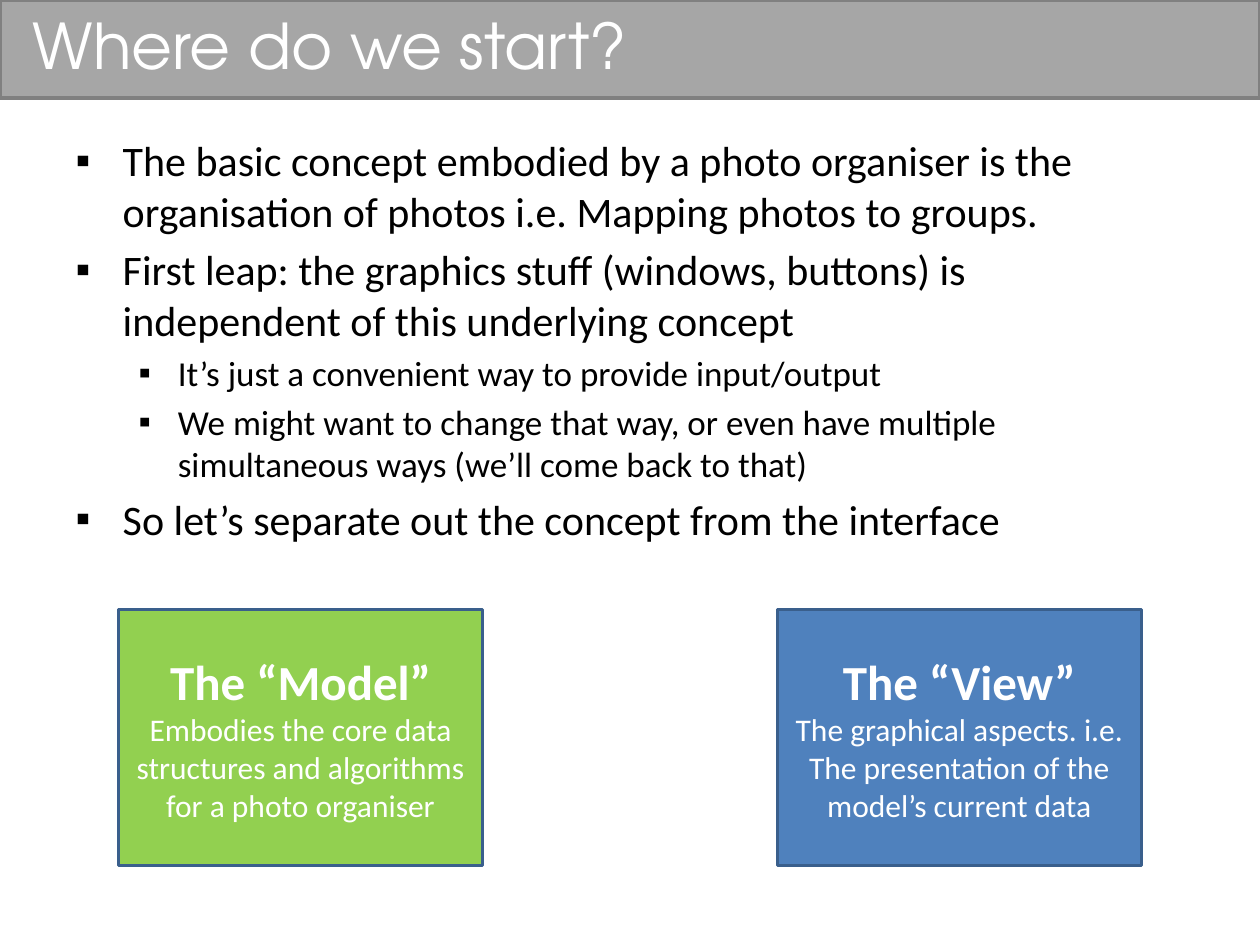
from lxml import etree
from pptx import Presentation, util as u
from pptx.dml.color import RGBColor
from pptx.enum import shapes, text
from pptx.oxml.ns import qn

# Content
TITLE = "Where do we start?"
BULLETS = [
    (0, "The basic concept embodied by a photo organiser is the organisation of photos i.e. Mapping photos to groups."),
    (0, "First leap: the graphics stuff (windows, buttons) is independent of this underlying concept"),
    (1, "It’s just a convenient way to provide input/output"),
    (1, "We might want to change that way, or even have multiple simultaneous ways (we’ll come back to that)"),
    (0, "So let’s separate out the concept from the interface"),
]
WHITE = RGBColor(0xFF, 0xFF, 0xFF)
BLACK = RGBColor(0, 0, 0)
BAND_FILL = RGBColor(0xA6, 0xA6, 0xA6)
BAND_LINE = RGBColor(0x80, 0x80, 0x80)
GREEN = RGBColor(0x92, 0xD0, 0x50)
BLUE = RGBColor(0x4F, 0x81, 0xBD)
BOX_LINE = RGBColor(0x3A, 0x5F, 0x8C)
BOXES = [
    (GREEN, "The “Model”", "Embodies the core data structures and algorithms for a photo organiser"),
    (BLUE, "The “View”", "The graphical aspects. i.e. The presentation of the model’s current data"),
]

# Sizes: (font size in points, left margin, hanging indent) per bullet level
LEVELS = [(24, u.Cm(0.95), u.Cm(0.95)), (20, u.Cm(2.06), u.Cm(0.79))]
SLIDE_WIDTH, SLIDE_HEIGHT = u.Cm(25.4), u.Cm(19.05)
BOX_MARGIN, BOX_TOP, BOX_WIDTH, BOX_HEIGHT = u.Cm(2.39), u.Cm(12.29), u.Cm(7.34), u.Cm(5.16)


def place(shape, left, top, width, height):
    shape.left, shape.top, shape.width, shape.height = left, top, width, height


def set_font(paragraph, size, color, name="Calibri", bold=False):
    font = paragraph.font
    font.name, font.size, font.bold = name, u.Pt(size), bold
    font.color.rgb = color


def add_rectangle(slide, left, top, width, height, fill, line):
    shape = slide.shapes.add_shape(shapes.MSO_SHAPE.RECTANGLE, left, top, width, height)
    shape.shadow.inherit = False
    shape.fill.solid()
    shape.fill.fore_color.rgb = fill
    shape.line.color.rgb = line
    shape.line.width = u.Pt(2)
    return shape


def set_bullet(paragraph, margin, hanging):
    properties = paragraph._p.get_or_add_pPr()
    properties.set("marL", str(margin))
    properties.set("indent", str(-hanging))
    etree.SubElement(properties, qn("a:buFont"), typeface="Arial")
    etree.SubElement(properties, qn("a:buChar"), char="▪")


presentation = Presentation()
presentation.slide_width, presentation.slide_height = SLIDE_WIDTH, SLIDE_HEIGHT
slide = presentation.slides.add_slide(presentation.slide_layouts[1])

# Title band, sent behind the placeholders
band = add_rectangle(slide, 0, 0, SLIDE_WIDTH, u.Cm(1.98), BAND_FILL, BAND_LINE)
slide.shapes._spTree.insert(2, band._element)

# Title
title = slide.shapes.title
place(title, u.Cm(0.41), 0, u.Cm(24.21), u.Cm(1.78))
title.text_frame.text = TITLE
title.text_frame.auto_size = text.MSO_AUTO_SIZE.NONE
title.text_frame.vertical_anchor = text.MSO_ANCHOR.MIDDLE
heading = title.text_frame.paragraphs[0]
heading.alignment = text.PP_ALIGN.LEFT
set_font(heading, 36, WHITE, "TeX Gyre Adventor")

# Bullet list
body = slide.placeholders[1]
place(body, u.Cm(1.27), u.Cm(2.59), u.Cm(22.86), u.Cm(15.29))
body.text_frame.text = "\n".join(line for _, line in BULLETS)
body.text_frame.auto_size = text.MSO_AUTO_SIZE.NONE
for index, (paragraph, (level, _)) in enumerate(zip(body.text_frame.paragraphs, BULLETS)):
    size, margin, hanging = LEVELS[level]
    paragraph.level = level
    set_bullet(paragraph, margin, hanging)
    paragraph.space_before = u.Pt(size * 0.2 if index else 0)
    set_font(paragraph, size, BLACK)

# Model and view boxes, mirrored about the slide centre
lefts = [BOX_MARGIN, SLIDE_WIDTH - BOX_MARGIN - BOX_WIDTH]
for left, (fill, name, description) in zip(lefts, BOXES):
    box = add_rectangle(slide, left, BOX_TOP, BOX_WIDTH, BOX_HEIGHT, fill, BOX_LINE)
    frame = box.text_frame
    frame.word_wrap = True
    frame.vertical_anchor = text.MSO_ANCHOR.MIDDLE
    frame.text = f"{name}\n{description}"
    for paragraph, size, bold in zip(frame.paragraphs, (28, 18), (True, False)):
        paragraph.alignment = text.PP_ALIGN.CENTER
        set_font(paragraph, size, WHITE, bold=bold)

presentation.save("out.pptx")
